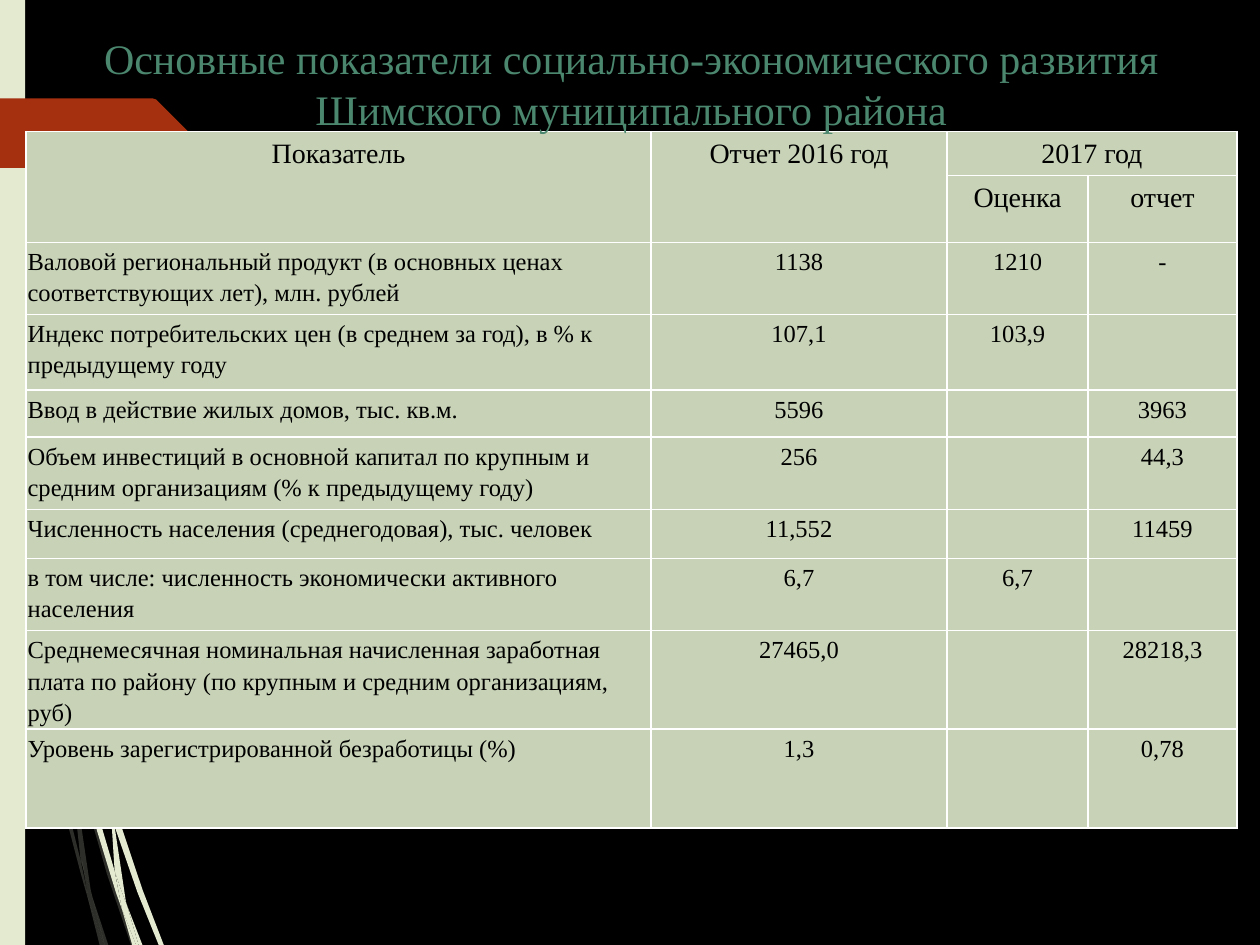
from itertools import product

from lxml.etree import SubElement
from pptx import Presentation
from pptx.dml.color import RGBColor
from pptx.enum.shapes import MSO_SHAPE
from pptx.enum.text import MSO_ANCHOR, MSO_AUTO_SIZE, PP_ALIGN
from pptx.oxml.ns import qn
from pptx.util import Pt

FONT = "Times New Roman"
CREAM, RUST, SAGE, GREEN = "E3EACF", "A53010", "C7D2B7", "4B866E"

TITLE = "Основные показатели социально-экономического развития\vШимского муниципального района"
COLUMNS = [357.1, 169.2, 80.6, 85]
ROWS = [25, 38.3, 41.2, 43.3, 26.8, 41.3, 28.2, 41.2, 56, 56.6]
CELLS = [
    ["Показатель", "Отчет 2016 год", "2017 год", ""],
    ["", "", "Оценка", "отчет"],
    ["Валовой региональный продукт (в основных ценах соответствующих лет), млн. рублей", "1138", "1210", "-"],
    ["Индекс потребительских цен (в среднем за год), в % к предыдущему году", "107,1", "103,9", ""],
    ["Ввод в действие жилых домов, тыс. кв.м.", "5596", "", "3963"],
    ["Объем инвестиций в основной капитал по крупным и средним организациям (% к предыдущему году)",
     "256", "", "44,3"],
    ["Численность населения (среднегодовая), тыс. человек", "11,552", "", "11459"],
    ["в том числе: численность экономически активного населения", "6,7", "6,7", ""],
    ["Среднемесячная номинальная начисленная заработная плата по району (по крупным и средним организациям, руб)",
     "27465,0", "", "28218,3"],
    ["Уровень зарегистрированной безработицы (%)", "1,3", "", "0,78"],
]
MERGES = [(0, 0, 1, 0), (0, 1, 1, 1), (0, 2, 0, 3)]

FAINT_STEMS = [
    [(46.1, 437), (43.9, 429.1), (43.9, 439.2), (61.2, 499.7), (74.9, 540), (77.8, 540), (63.4, 498.2)],
    [(59.8, 540), (61.9, 540), (52.6, 511.9)],
    [(46.1, 491.8), (34.6, 445.7), (15.8, 337.7), (8.6, 270.7), (5.8, 252), (13.7, 338.4),
     (32.4, 447.1), (46.1, 499), (50.4, 514.1), (49.7, 509)],
    [(41.8, 431.3), (43.2, 465.1), (46.1, 491.8), (48.2, 498.2), (52.6, 511.9), (51.8, 508.3),
     (45.4, 465.1), (43.9, 439.2), (43.9, 437.8)],
    [(50.4, 514.1), (56.9, 540), (59, 540)],
    [(48.2, 498.2), (46.8, 491.8), (49.7, 509), (50.4, 514.1), (59, 540), (59.8, 540), (52.6, 511.9)],
]
BRIGHT_STEMS = [
    [(67.7, 467.3), (65.5, 461.5), (65.5, 472.3), (78.5, 509.8), (90.7, 540), (93.6, 540), (81.4, 508.3)],
    [(65.5, 497.5), (58.3, 473), (43.2, 400.3), (38.2, 363.6), (33.8, 343.4), (40.3, 401),
     (55.4, 474.5), (66.2, 509.8), (69.8, 519.8), (69.1, 516.2)],
    [(79.2, 540), (81.4, 540), (72.7, 517.7)],
    [(63.4, 464.4), (65.5, 497.5), (69.1, 508.3), (72.7, 517.7), (72, 515.5), (65.5, 472.3), (64.8, 468.7)],
    [(69.8, 519.8), (75.6, 540), (77.8, 540)],
    [(69.1, 508.3), (65.5, 497.5), (69.1, 516.2), (69.8, 519.8), (77.8, 540), (79.2, 540), (72.7, 517.7)],
]


def color(value):
    """Turn a hex string into a colour."""
    return RGBColor.from_string(value)


def paint(shape, value, alpha=None):
    """Give a shape a plain fill with no line or shadow."""
    shape.shadow.inherit = False
    shape.line.fill.background()
    shape.fill.solid()
    shape.fill.fore_color.rgb = color(value)
    if alpha is not None:
        tint = shape.fill._xPr.find(qn("a:solidFill"))[0]
        SubElement(tint, qn("a:alpha"), val=str(alpha * 1000))


def add_outline(page, left, top, points, value, alpha=None):
    """Draw a closed outline whose points are offset from left and top."""
    corners = [(Pt(left + x), Pt(top + y)) for x, y in points]
    builder = page.shapes.build_freeform(*corners[0], scale=1.0)
    builder.add_line_segments(corners[1:], close=True)
    paint(builder.convert_to_shape(), value, alpha)


def add_decoration(page, left, top, height):
    """Draw the stems, the side strip and the flag."""
    for stems, alpha in ((FAINT_STEMS, 20), (BRIGHT_STEMS, None)):
        for stem in stems:
            add_outline(page, left, top, stem, CREAM, alpha)
    strip = page.shapes.add_shape(MSO_SHAPE.RECTANGLE, Pt(left), Pt(top), Pt(14.4), Pt(height))
    paint(strip, CREAM)
    flag = [(0, 0), (87.1, 0), (89.3, 0.7), (107.3, 18.7), (107.3, 20.9), (89.3, 38.9), (87.1, 39.8), (0, 39.8)]
    add_outline(page, left, top + 56.2, flag, RUST)


def add_border(cell):
    """Put a thin white line on every side of a cell."""
    properties = cell._tc.get_or_add_tcPr()
    for side in ("lnL", "lnR", "lnT", "lnB"):
        line = SubElement(properties, qn(f"a:{side}"), w=str(Pt(1)))
        fill = SubElement(line, qn("a:solidFill"))
        SubElement(fill, qn("a:srgbClr"), val="FFFFFF")


def add_indicators(page, left, top):
    """Place the table of indicators."""
    frame = page.shapes.add_table(len(ROWS), len(COLUMNS), Pt(left), Pt(top), Pt(sum(COLUMNS)), Pt(sum(ROWS)))
    table = frame.table
    for column, width in zip(table.columns, COLUMNS):
        column.width = Pt(width)
    for row, height in zip(table.rows, ROWS):
        row.height = Pt(height)
    for r, c in product(range(len(ROWS)), range(len(COLUMNS))):
        cell = table.cell(r, c)
        add_border(cell)
        cell.fill.solid()
        cell.fill.fore_color.rgb = color(SAGE)
        cell.margin_left = cell.margin_right = Pt(0.9)
        cell.margin_top = cell.margin_bottom = Pt(1.4)
        cell.text = CELLS[r][c]
        para = cell.text_frame.paragraphs[0]
        para.alignment = PP_ALIGN.LEFT if r > 1 and c == 0 else PP_ALIGN.CENTER
        para.line_spacing = 1.15
        para.font.name = FONT
        para.font.size = Pt(16 if r < 2 else 14)
        para.font.bold = False
        para.font.color.rgb = color("000000")
    for first_row, first_column, last_row, last_column in MERGES:
        table.cell(first_row, first_column).merge(table.cell(last_row, last_column))


def place_title(page, left, top, width, height):
    """Move, format and bring forward the title."""
    title = page.shapes.title
    title.left, title.top, title.width, title.height = Pt(left), Pt(top), Pt(width), Pt(height)
    frame = title.text_frame
    frame.text = TITLE
    frame.word_wrap = True
    frame.auto_size = MSO_AUTO_SIZE.NONE
    frame.vertical_anchor = MSO_ANCHOR.TOP
    para = frame.paragraphs[0]
    para.alignment = PP_ALIGN.CENTER
    para.font.name = FONT
    para.font.size = Pt(24)
    para.font.color.rgb = color(GREEN)
    page.shapes._spTree.append(title._element)


def main():
    """Build and save the deck."""
    deck = Presentation()
    deck.slide_width, deck.slide_height = Pt(720), Pt(540)
    page = deck.slides.add_slide(deck.slide_layouts[5])
    page.background.fill.solid()
    page.background.fill.fore_color.rgb = color("000000")
    add_decoration(page, 0, 0, 540)
    add_indicators(page, 14.9, 75.2)
    place_title(page, 1.4, 15.1, 718.6, 87.1)
    deck.save("out.pptx")


if __name__ == "__main__":
    main()
